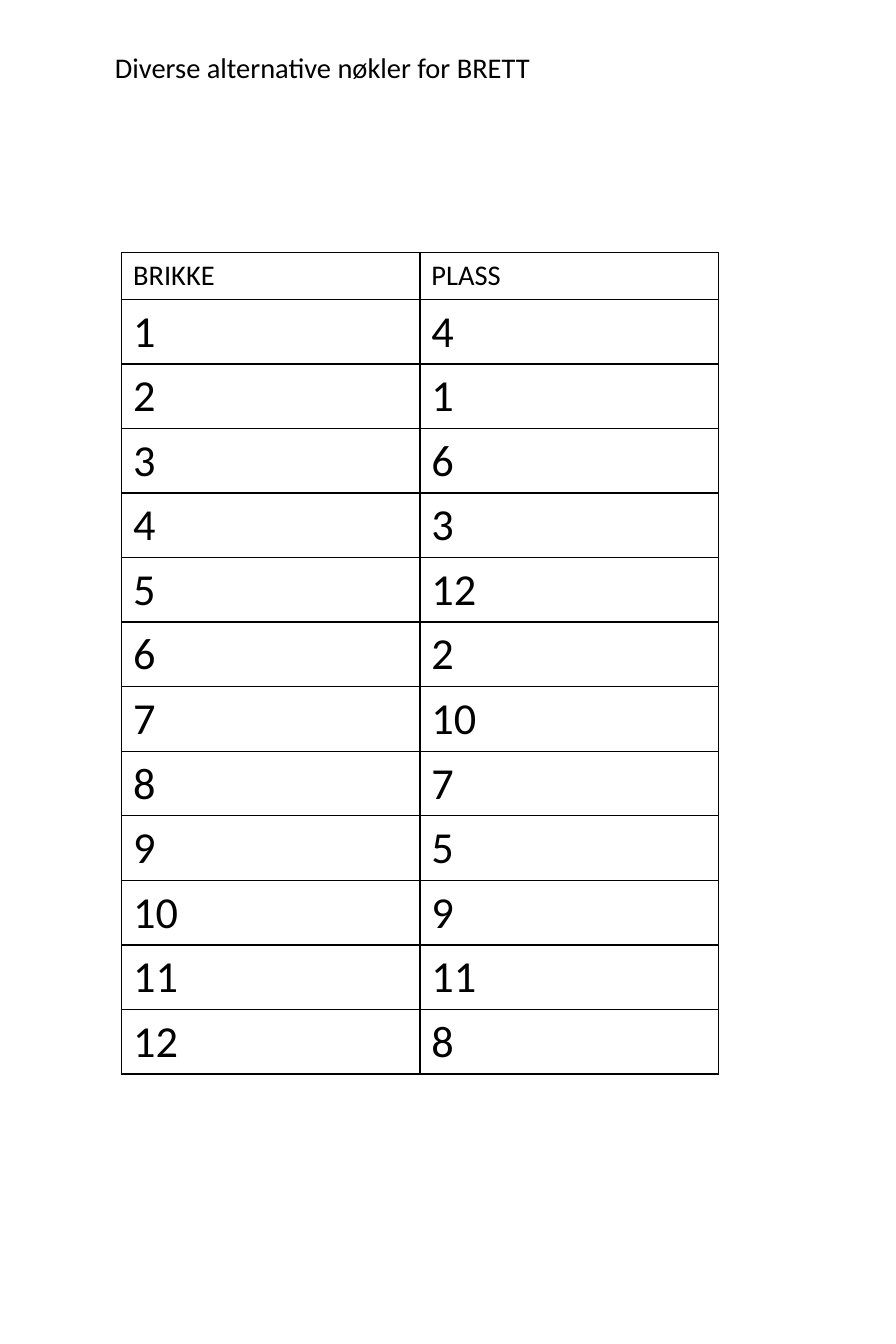
from dataclasses import dataclass

from lxml.etree import SubElement
from pptx import Presentation
from pptx.dml.color import RGBColor
from pptx.enum.text import MSO_ANCHOR, MSO_AUTO_SIZE, PP_ALIGN
from pptx.oxml.ns import qn
from pptx.slide import Slide
from pptx.table import _Cell
from pptx.text.text import TextFrame
from pptx.util import Inches, Pt

COLOURS = {"ink": "000000", "paper": "FFFFFF"}
FONT = "Calibri"
COLUMN_WIDTH = 2.62
ROW_HEIGHT = 0.41


@dataclass(frozen=True)
class KeyRow:
    """One line of the key: a piece, its place and the text size."""

    piece: str
    place: str
    size: float = 28


PLACES = [4, 1, 6, 3, 12, 2, 10, 7, 5, 9, 11, 8]
KEY_ROWS = [KeyRow("BRIKKE", "PLASS", size=18)] + [
    KeyRow(str(piece), str(place)) for piece, place in enumerate(PLACES, start=1)
]


def write_text(frame: TextFrame, text: str, *, size: float, colour: str = "ink") -> None:
    """Fill a text frame with one left-aligned, formatted paragraph."""
    para = frame.paragraphs[0]
    para.alignment = PP_ALIGN.LEFT
    span = para.add_run()
    span.text = text
    span.font.name = FONT
    span.font.size = Pt(size)
    span.font.bold = False
    span.font.color.rgb = RGBColor.from_string(COLOURS[colour])


def draw_borders(cell: _Cell, colour: str = "ink", width: float = 1) -> None:
    """Outline all four sides of a table cell."""
    properties = cell._tc.get_or_add_tcPr()
    for side in ("a:lnL", "a:lnR", "a:lnT", "a:lnB"):
        line = SubElement(properties, qn(side), w=str(Pt(width)))
        fill = SubElement(line, qn("a:solidFill"))
        SubElement(fill, qn("a:srgbClr"), val=COLOURS[colour])


def draw_title(page: Slide, text: str) -> None:
    """Place the heading in the title placeholder."""
    box = page.shapes.title
    box.left, box.top = Inches(0.91), Inches(0.39)
    box.width, box.height = Inches(5.95), Inches(0.4)
    frame = box.text_frame
    frame.word_wrap = True
    frame.auto_size = MSO_AUTO_SIZE.SHAPE_TO_FIT_TEXT
    frame.vertical_anchor = MSO_ANCHOR.TOP
    write_text(frame, text, size=18)


def draw_key(page: Slide, rows: list[KeyRow]) -> None:
    """Draw the table that matches pieces to places."""
    table = page.shapes.add_table(
        len(rows), 2, Inches(1.07), Inches(2.22), Inches(2 * COLUMN_WIDTH), Inches(7.21)
    ).table
    table.first_row = False
    table.horz_banding = False
    for column in table.columns:
        column.width = Inches(COLUMN_WIDTH)
    for line, row in zip(table.rows, rows):
        line.height = Inches(ROW_HEIGHT)
        for cell, text in zip(line.cells, (row.piece, row.place)):
            draw_borders(cell)
            cell.fill.background()
            write_text(cell.text_frame, text, size=row.size)


def main() -> None:
    """Build and save the deck."""
    deck = Presentation()
    deck.slide_width, deck.slide_height = Inches(7.87), Inches(11.81)
    page = deck.slides.add_slide(deck.slide_layouts.get_by_name("Title Only"))
    page.background.fill.solid()
    page.background.fill.fore_color.rgb = RGBColor.from_string(COLOURS["paper"])
    draw_title(page, "Diverse alternative nøkler for BRETT")
    draw_key(page, KEY_ROWS)
    deck.save("out.pptx")


if __name__ == "__main__":
    main()
